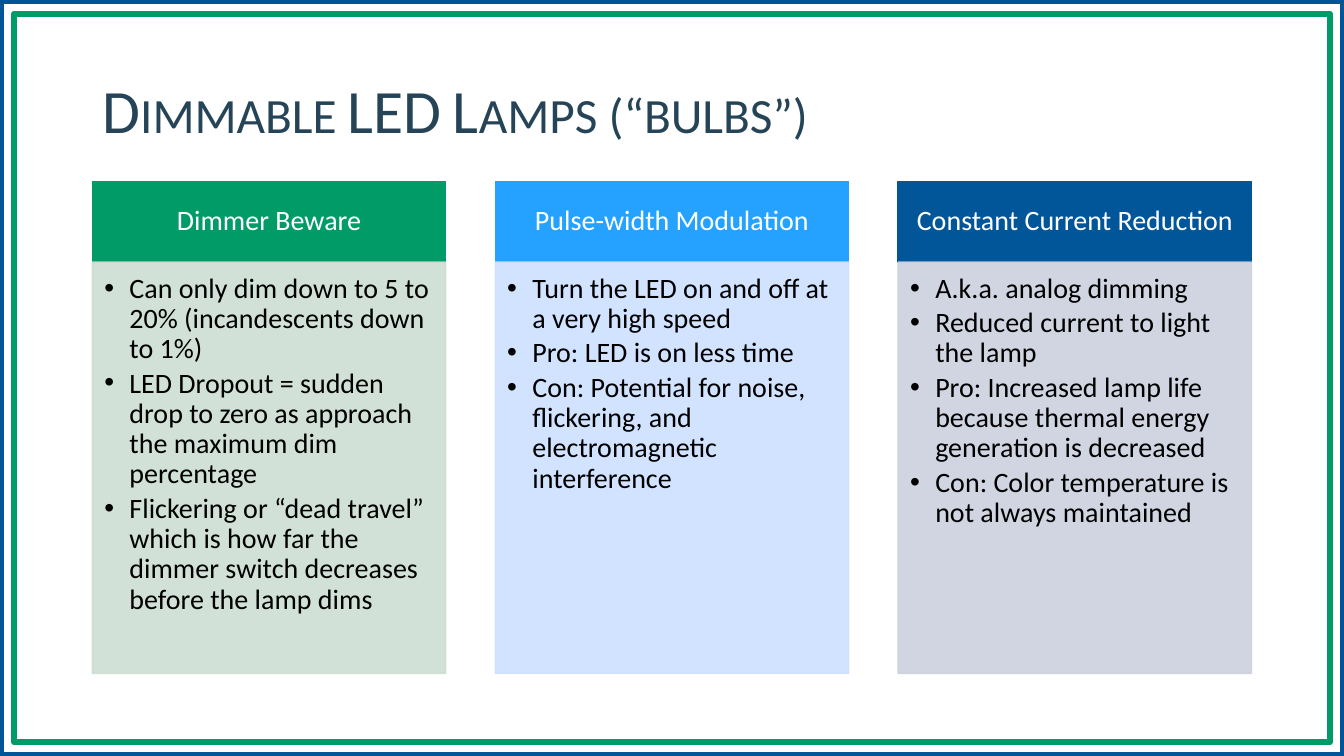
from lxml import etree
from pptx import Presentation
from pptx import util as u
from pptx.dml.color import RGBColor
from pptx.enum import shapes, text
from pptx.oxml.ns import qn

Pt = u.Pt
FONT = "Calibri"
W, H = 960, 540
C = {
    "blue": "005699", "green": "009B67", "sky": "25A2FF",
    "pale_green": "CCDED3", "pale_sky": "CDE0FF", "pale_blue": "CCD1DE",
    "title": "264457", "white": "FFFFFF", "black": "000000",
}
TITLE = "Dimmable LED Lamps (“bulbs”)"
COLUMNS = [
    ("Dimmer Beware", "green", "pale_green", [
        "Can only dim down to 5 to 20% (incandescents down to 1%)",
        "LED Dropout = sudden drop to zero as approach the maximum dim percentage",
        "Flickering or “dead travel” which is how far the dimmer switch "
        "decreases before the lamp dims"]),
    ("Pulse-width Modulation", "sky", "pale_sky", [
        "Turn the LED on and off at a very high speed",
        "Pro: LED is on less time",
        "Con: Potential for noise, flickering, and electromagnetic interference"]),
    ("Constant Current Reduction", "blue", "pale_blue", [
        "A.k.a. analog dimming",
        "Reduced current to light the lamp",
        "Pro: Increased lamp life because thermal energy generation is decreased",
        "Con: Color temperature is not always maintained"]),
]


def rgb(name):
    return RGBColor.from_string(C[name])


def add_rect(s, x, y, w, h, line, line_width=1, fill=None, alpha=None):
    sp = s.shapes.add_shape(shapes.MSO_SHAPE.RECTANGLE, Pt(x), Pt(y), Pt(w), Pt(h))
    sp.shadow.inherit = False
    sp.line.color.rgb = rgb(line)
    sp.line.width = Pt(line_width)
    if fill:
        sp.fill.solid()
        sp.fill.fore_color.rgb = rgb(fill)
    else:
        sp.fill.background()
    if alpha:
        for clr in sp._element.spPr.iter(qn("a:srgbClr")):
            etree.SubElement(clr, qn("a:alpha")).set("val", str(alpha * 1000))
    return sp


def write(sp, lines, size=20, color="black", align="LEFT", anchor="TOP",
          insets=(7.2, 3.6, 7.2, 3.6), after=0, bullet=False, small_caps=False):
    tf = sp.text_frame
    tf.word_wrap = True
    tf.vertical_anchor = text.MSO_ANCHOR[anchor]
    (tf.margin_left, tf.margin_top,
     tf.margin_right, tf.margin_bottom) = map(Pt, insets)
    for i, line in enumerate(lines):
        p = tf.add_paragraph() if i else tf.paragraphs[0]
        if bullet:
            pPr = p._p.get_or_add_pPr()
            pPr.set("marL", str(Pt(18)))
            pPr.set("indent", str(-Pt(18)))
            etree.SubElement(pPr, qn("a:buFont")).set("typeface", "Arial")
            etree.SubElement(pPr, qn("a:buChar")).set("char", "•")
        p.alignment = text.PP_ALIGN[align]
        p.line_spacing = 0.9
        p.space_after = Pt(after)
        r = p.add_run()
        r.text = line
        r.font.name = FONT
        r.font.size = Pt(size)
        r.font.color.rgb = rgb(color)
        if small_caps:
            r.font._element.set("cap", "small")


def add_frame(s, x, y, w, h):
    # Blue slide edge with a green line inside it
    add_rect(s, x, y, w, h, "blue", 6)
    gap = 10
    add_rect(s, x + gap, y + gap, w - 2 * gap, h - 2 * gap, "green", 4.5)


def add_title(s, x, y, w, h):
    sp = s.shapes.add_textbox(Pt(x), Pt(y), Pt(w), Pt(h))
    write(sp, [TITLE], size=44, color="title", anchor="MIDDLE", small_caps=True)


def add_column(s, x, y, w, h, heading, dark, pale, points):
    head_h = 57.6
    # Heading band
    head = add_rect(s, x, y, w, head_h, dark, fill=dark)
    write(head, [heading], color="white", align="CENTER", anchor="MIDDLE",
          insets=(11.2, 6.4, 11.2, 6.4))
    # Bullet panel
    body = add_rect(s, x, y + head_h, w, h - head_h, pale, fill=pale, alpha=90)
    write(body, points, insets=(8.5, 8.5, 11.4, 12.8), after=3, bullet=True)


def add_columns(s, x, y, w, h):
    col_w = 252.4
    pitch = (w - col_w) / (len(COLUMNS) - 1)
    for i, column in enumerate(COLUMNS):
        add_column(s, x + i * pitch, y, col_w, h, *column)


def main():
    prs = Presentation()
    prs.slide_width, prs.slide_height = Pt(W), Pt(H)
    s = prs.slides.add_slide(prs.slide_layouts[6])
    add_frame(s, 0, 0, W, H)
    add_title(s, 66, 28.75, 828, 104.4)
    add_columns(s, 66, 129.6, 828, 351.4)
    prs.save("out.pptx")


if __name__ == "__main__":
    main()
